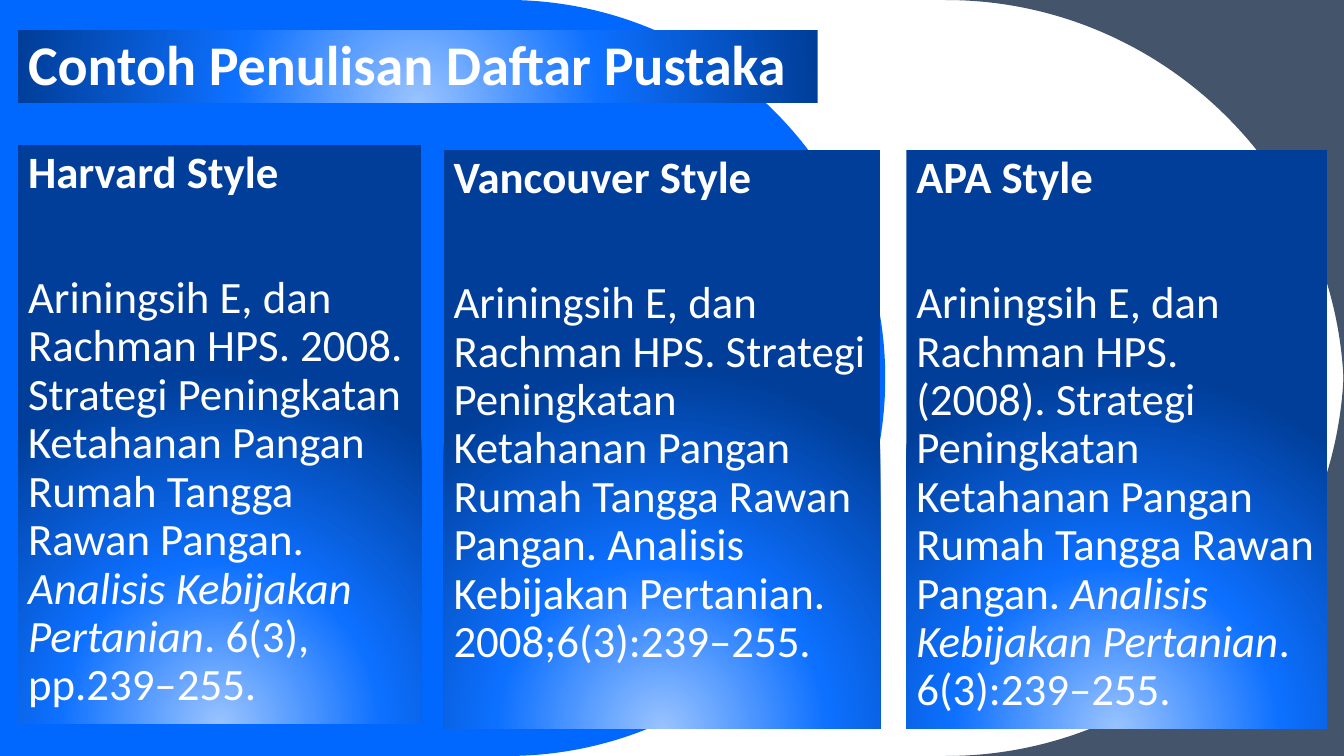
from dataclasses import dataclass

from lxml import etree
from pptx import Presentation
from pptx.dml.color import RGBColor
from pptx.enum.shapes import MSO_SHAPE
from pptx.enum.text import MSO_ANCHOR, PP_ALIGN
from pptx.oxml.ns import qn
from pptx.util import Inches, Pt

TITLE = "Contoh Penulisan Daftar Pustaka"
WORK = "Strategi Peningkatan Ketahanan Pangan Rumah Tangga Rawan Pangan. "
JOURNAL = "Analisis Kebijakan Pertanian"
STYLES = [
    ("Harvard Style", [("Ariningsih E, dan Rachman HPS. 2008. " + WORK, False),
                       (JOURNAL, True), (". 6(3), pp.239–255.", False)]),
    ("Vancouver Style", [("Ariningsih E, dan Rachman HPS. " + WORK + JOURNAL
                          + ". 2008;6(3):239–255.", False)]),
    ("APA Style", [("Ariningsih E, dan Rachman HPS. (2008). " + WORK, False),
                   (JOURNAL, True), (". 6(3):239–255.", False)]),
]


@dataclass(frozen=True)
class Theme:
    font: str = "Calibri"
    white: str = "FFFFFF"
    blue: str = "0068FF"
    slate: str = "44546A"
    glow: tuple = ((0, "99C3FF"), (46, "0D70FF"), (100, "003E99"))
    title_size: int = 40
    text_size: int = 32
    body_gap: float = 54.5
    line_spacing: float = 0.9


THEME = Theme()
WIDTH, HEIGHT = 13.33, 7.5
TITLE_BOX = (0.18, 0.3, 7.93, 0.72)
PANEL_HEIGHT = 5.74
PANELS = [(0.18, 1.44, 4), (4.4, 1.49, 4.33), (8.99, 1.49, 4.17)]
DOME_RADIUS = HEIGHT / 2
DOME_CENTRE = 5.03
CORNER_RADIUS = 3.95
ROUNDNESS = 0.55


def quarter_arc(start, corner, end):
    handles = [tuple(a + (c - a) * ROUNDNESS for a, c in zip(anchor, corner))
               for anchor in (start, end)]
    return [*handles, end]


def add_outline(slide, start, segments, color):
    points = [tuple(map(Inches, point)) for segment in segments for point in segment]
    builder = slide.shapes.build_freeform(*map(Inches, start))
    builder.add_line_segments(points, close=True)
    shape = builder.convert_to_shape()
    lines = iter(list(shape._element.iter(qn("a:lnTo"))))
    for segment in segments:
        members = [next(lines) for _ in segment]
        if len(members) == 3:
            curve = etree.Element(qn("a:cubicBezTo"))
            members[0].addprevious(curve)
            for member in members:
                curve.append(member[0])
                member.getparent().remove(member)
    shape.shadow.inherit = False
    shape.fill.solid()
    shape.fill.fore_color.rgb = RGBColor.from_string(color)
    shape.line.fill.background()


def add_backdrop(slide):
    right = DOME_CENTRE + DOME_RADIUS
    top, tip, bottom = (DOME_CENTRE, 0), (right, DOME_RADIUS), (DOME_CENTRE, HEIGHT)
    add_outline(slide, (0, 0), [
        [top],
        quarter_arc(top, (right, 0), tip),
        quarter_arc(tip, (right, HEIGHT), bottom),
        [(0, HEIGHT)],
    ], THEME.blue)
    for edge, side in ((0, CORNER_RADIUS), (HEIGHT, HEIGHT - CORNER_RADIUS)):
        corner, start, end = (WIDTH, edge), (WIDTH - CORNER_RADIUS, edge), (WIDTH, side)
        add_outline(slide, corner, [[start], quarter_arc(start, corner, end)], THEME.slate)


def fill_glow(shape):
    shape.fill.gradient()
    gradient = shape.fill._xPr.find(qn("a:gradFill"))
    for child in list(gradient):
        gradient.remove(child)
    stops = etree.SubElement(gradient, qn("a:gsLst"))
    for position, color in THEME.glow:
        stop = etree.SubElement(stops, qn("a:gs"), pos=str(position * 1000))
        etree.SubElement(stop, qn("a:srgbClr"), val=color)
    circle = etree.SubElement(gradient, qn("a:path"))
    circle.set("path", "circle")
    etree.SubElement(circle, qn("a:fillToRect"), l="50000", t="130000", r="50000", b="-30000")


def add_panel(slide, box, anchor):
    shape = slide.shapes.add_shape(MSO_SHAPE.RECTANGLE, *map(Inches, box))
    shape.shadow.inherit = False
    shape.line.fill.background()
    fill_glow(shape)
    shape.text_frame.word_wrap = True
    shape.text_frame.vertical_anchor = anchor
    return shape.text_frame


def write(paragraph, runs, size, bold=False):
    paragraph.alignment = PP_ALIGN.LEFT
    paragraph.line_spacing = THEME.line_spacing
    for text, italic in runs:
        run = paragraph.add_run()
        run.text = text
        run.font.name = THEME.font
        run.font.size = Pt(size)
        run.font.bold = bold
        run.font.italic = italic
        run.font.color.rgb = RGBColor.from_string(THEME.white)


def main():
    presentation = Presentation()
    presentation.slide_width = Inches(WIDTH)
    presentation.slide_height = Inches(HEIGHT)
    slide = presentation.slides.add_slide(presentation.slide_layouts[6])
    add_backdrop(slide)
    title = add_panel(slide, TITLE_BOX, MSO_ANCHOR.BOTTOM)
    write(title.paragraphs[0], [(TITLE, False)], THEME.title_size, bold=True)
    for (heading, citation), (left, top, width) in zip(STYLES, PANELS):
        frame = add_panel(slide, (left, top, width, PANEL_HEIGHT), MSO_ANCHOR.TOP)
        write(frame.paragraphs[0], [(heading, False)], THEME.text_size, bold=True)
        body = frame.add_paragraph()
        body.space_before = Pt(THEME.body_gap)
        write(body, citation, THEME.text_size)
    presentation.save("out.pptx")


if __name__ == "__main__":
    main()
